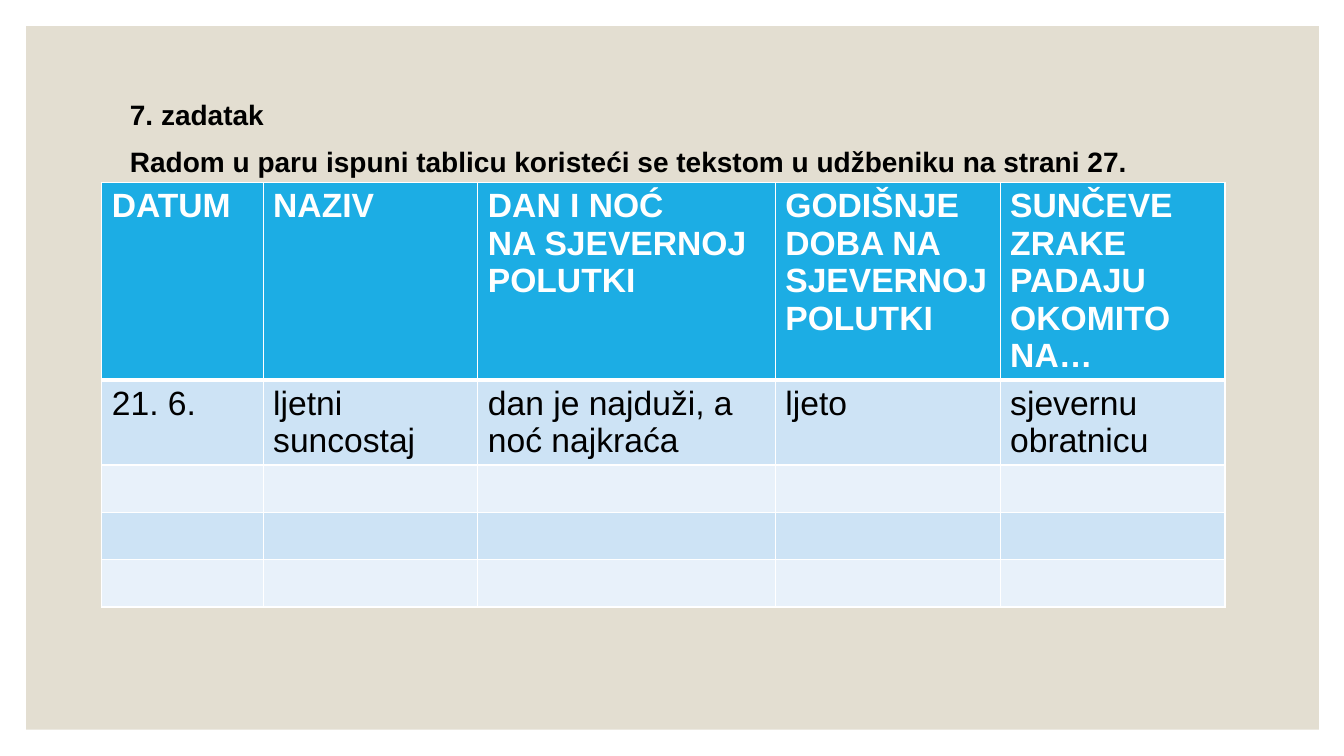
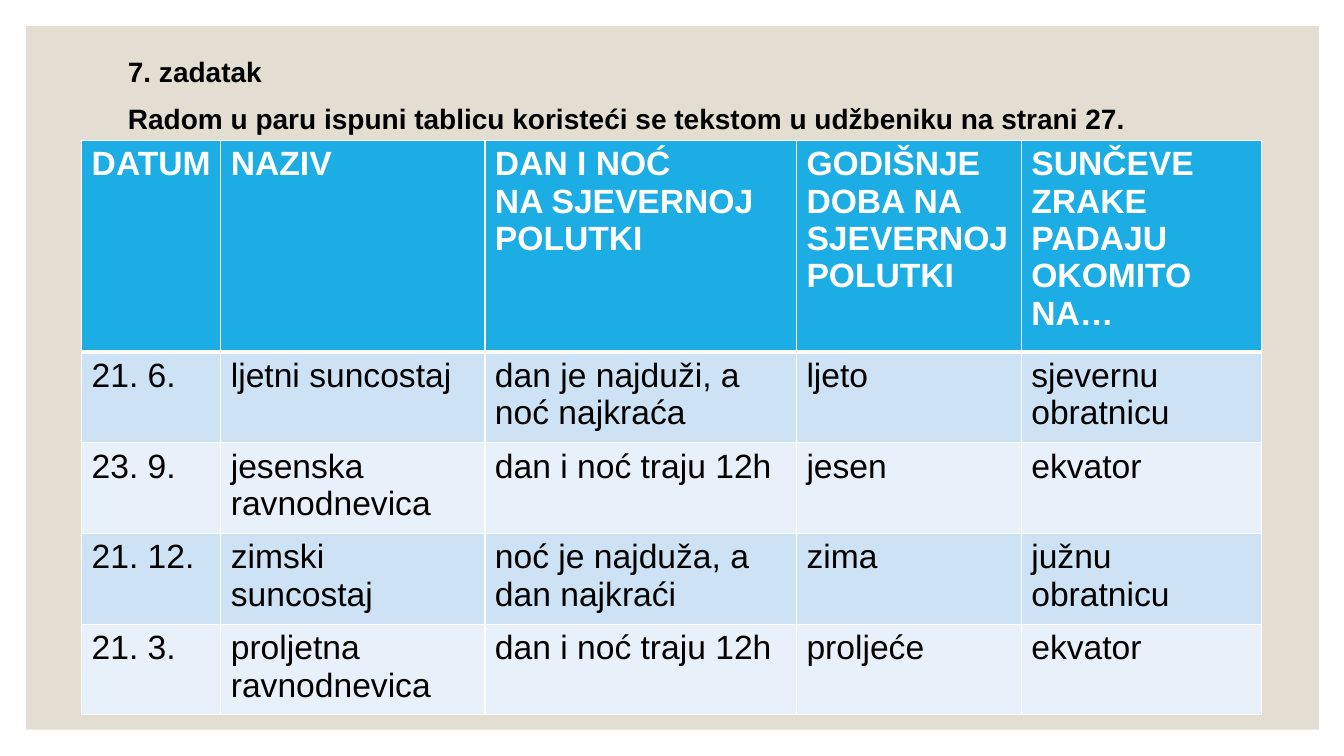
import dataclasses

import lxml.etree
import pptx
import pptx.dml.color
import pptx.enum.shapes
import pptx.enum.text
import pptx.oxml.ns
import pptx.util

Inches = pptx.util.Inches
Pt = pptx.util.Pt

FONT = "Arial"
SAND, BLUE, PALE, LIGHT = "E3DED1", "1CADE4", "CDE3F5", "E8F1FA"
WHITE, BLACK = "FFFFFF", "000000"

TASK = (
    "7. zadatak\n"
    "Radom u paru ispuni tablicu koristeći se tekstom u udžbeniku na strani 27."
)
HEADS = (
    "DATUM",
    "NAZIV",
    "DAN I NOĆ\nNA SJEVERNOJ POLUTKI",
    "GODIŠNJE DOBA NA SJEVERNOJ POLUTKI",
    "SUNČEVE ZRAKE PADAJU OKOMITO NA…",
)
DATES = (
    ("21. 6.", "ljetni suncostaj", "dan je najduži, a noć najkraća", "ljeto", "sjevernu obratnicu"),
    ("23. 9.", "jesenska ravnodnevica", "dan i noć traju 12h", "jesen", "ekvator"),
    ("21. 12.", "zimski suncostaj", "noć je najduža, a dan najkraći", "zima", "južnu obratnicu"),
    ("21. 3.", "proljetna ravnodnevica", "dan i noć traju 12h", "proljeće", "ekvator"),
)


@dataclasses.dataclass
class Page:
    task: tuple[float, float]
    grid: tuple[float, float]
    cols: tuple[float, ...]
    rows: tuple[float, ...]
    shown: int  # how many date rows are filled in


PAGES = (
    Page((1.19, 0.89), (1.01, 1.81), (1.6, 2.13, 2.95, 2.23, 2.23),
         (1.96, 0.84, 0.47, 0.47, 0.47), 1),
    Page((1.17, 0.47), (0.81, 1.39), (1.38, 2.62, 3.09, 2.23, 2.38),
         (2.1, 0.9, 0.9, 0.9, 0.9), 4),
)


def paint(fill, color: str) -> None:
    fill.solid()
    fill.fore_color.rgb = pptx.dml.color.RGBColor.from_string(color)


def style(frame, size: float, color: str, bold: bool) -> None:
    for par in frame.paragraphs:
        for run in par.runs:
            run.font.name = FONT
            run.font.size = Pt(size)
            run.font.bold = bold
            run.font.color.rgb = pptx.dml.color.RGBColor.from_string(color)


def edge(cell, side: str, width: float) -> None:
    """Draw one white border; call before the cell is filled."""
    qn = pptx.oxml.ns.qn
    line = lxml.etree.SubElement(
        cell._tc.get_or_add_tcPr(), qn(f"a:ln{side}"), w=str(Pt(width))
    )
    fill = lxml.etree.SubElement(line, qn("a:solidFill"))
    lxml.etree.SubElement(fill, qn("a:srgbClr"), val=WHITE)


def add_panel(slide) -> None:
    panel = slide.shapes.add_shape(
        pptx.enum.shapes.MSO_SHAPE.RECTANGLE,
        Inches(0.26), Inches(0.26), Inches(12.82), Inches(6.98),
    )
    panel.shadow.inherit = False
    paint(panel.fill, SAND)
    panel.line.fill.background()


def add_task(slide, left: float, top: float) -> None:
    box = slide.shapes.add_textbox(Inches(left), Inches(top), Inches(11.13), Inches(0.92))
    frame = box.text_frame
    frame.word_wrap = True
    frame.auto_size = pptx.enum.text.MSO_AUTO_SIZE.SHAPE_TO_FIT_TEXT
    frame.text = TASK
    for par in frame.paragraphs:
        par.line_spacing = 1.07
        par.space_after = Pt(8)
    style(frame, 20, BLACK, True)


def add_grid(slide, page: Page) -> None:
    left, top = page.grid
    table = slide.shapes.add_table(
        len(page.rows), len(page.cols), Inches(left), Inches(top),
        Inches(sum(page.cols)), Inches(sum(page.rows)),
    ).table
    for col, width in zip(table.columns, page.cols):
        col.width = Inches(width)
    for row, height in zip(table.rows, page.rows):
        row.height = Inches(height)

    texts = (HEADS, *DATES[:page.shown])
    for r in range(len(page.rows)):
        head = r == 0
        color = BLUE if head else PALE if r % 2 else LIGHT
        for c in range(len(page.cols)):
            cell = table.cell(r, c)
            for side in "LRTB":
                thick = (r, side) in ((0, "B"), (1, "T"))
                edge(cell, side, 3 if thick else 1)
            paint(cell.fill, color)
            if r < len(texts):
                cell.text_frame.text = texts[r][c]
                style(cell.text_frame, 24, WHITE if head else BLACK, head)


def main() -> None:
    deck = pptx.Presentation()
    deck.slide_width, deck.slide_height = Inches(13.33), Inches(7.5)
    for page in PAGES:
        slide = deck.slides.add_slide(deck.slide_layouts[6])
        paint(slide.background.fill, WHITE)
        add_panel(slide)
        add_grid(slide, page)
        add_task(slide, *page.task)
    deck.save("out.pptx")


if __name__ == "__main__":
    main()
